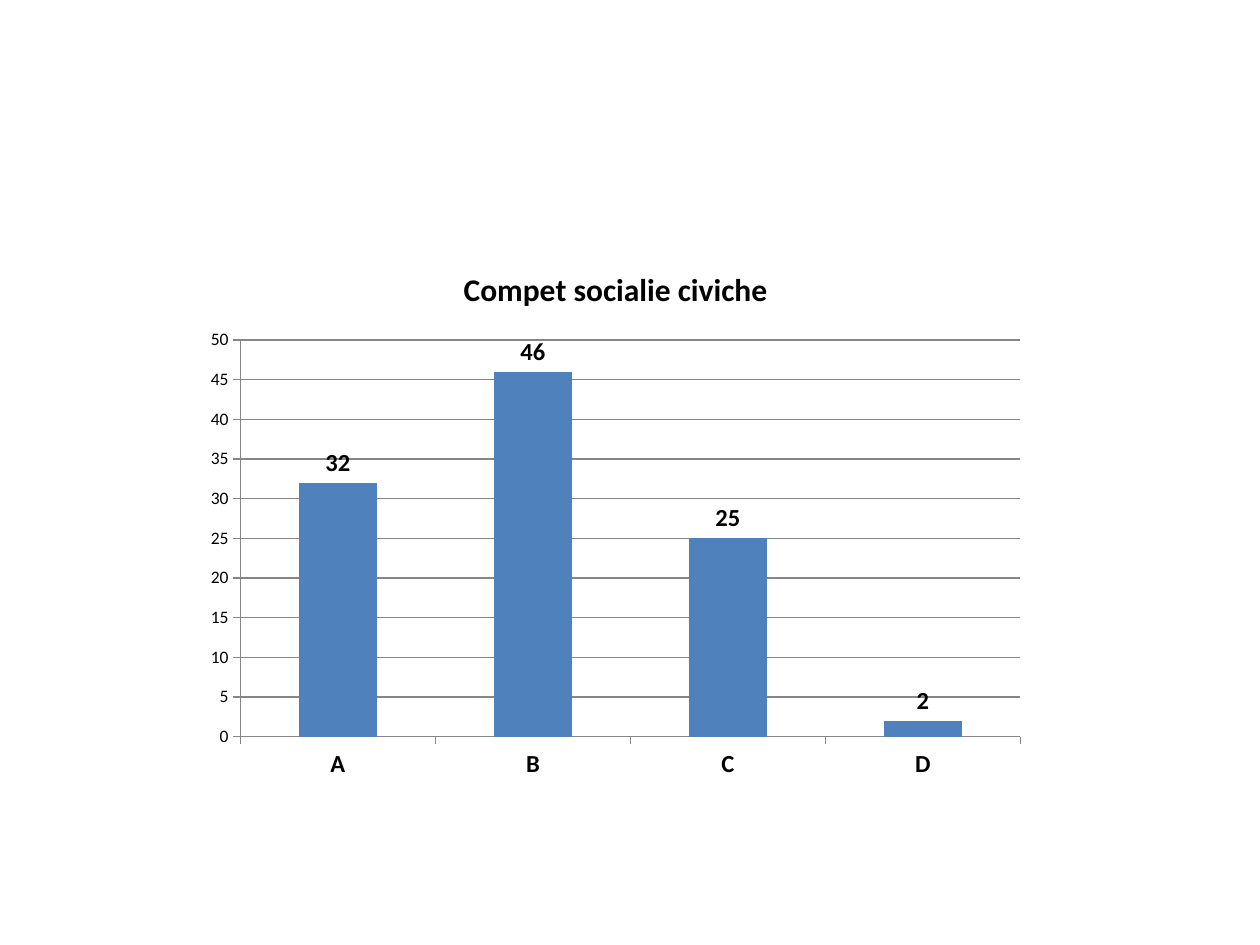
from pptx import Presentation
from pptx import util as u
from pptx.chart import data
from pptx.dml import color
from pptx.enum import chart as ch

COLOURS = {"bars": "4F81BD", "lines": "868686", "text": "000000"}


def style_font(font, size, bold=False):
    font.name = "Calibri"
    font.size = u.Pt(size)
    font.bold = bold
    font.color.rgb = color.RGBColor.from_string(COLOURS["text"])


def write_text(frame, wording, **style):
    frame.text = wording
    style_font(frame.paragraphs[0].runs[0].font, **style)


deck = Presentation()
deck.slide_width, deck.slide_height = u.Cm(25.4), u.Cm(19.05)
slide = deck.slides.add_slide(deck.slide_layouts[6])

heading = "Compet socialie civiche"
grades = data.CategoryChartData(number_format="General")
grades.categories = ["A", "B", "C", "D"]
grades.add_series(heading, (32, 46, 25, 2))

competences = slide.shapes.add_chart(
    ch.XL_CHART_TYPE.COLUMN_CLUSTERED,
    u.Cm(3.91), u.Cm(4.93), u.Cm(17), u.Cm(11), grades,
).chart
style_font(competences.font, size=10)
competences.has_legend = False
competences.has_title = True
write_text(competences.chart_title.text_frame, heading, size=18, bold=True)
competences.chart_title.include_in_layout = False

pupils_axis = competences.value_axis
pupils_axis.minimum_scale, pupils_axis.maximum_scale = 0, 50
pupils_axis.major_unit = 5
pupils_axis.has_major_gridlines = True
grade_axis = competences.category_axis
style_font(grade_axis.tick_labels.font, size=14, bold=True)
for axis in (pupils_axis, grade_axis):
    axis.major_tick_mark = ch.XL_TICK_MARK.OUTSIDE
for ruled in (pupils_axis, grade_axis, pupils_axis.major_gridlines):
    ruled.format.line.color.rgb = color.RGBColor.from_string(COLOURS["lines"])
    ruled.format.line.width = u.Pt(0.75)

columns = competences.plots[0]
columns.gap_width = 150
columns.vary_by_categories = False
bars = columns.series[0]
bars.format.fill.solid()
bars.format.fill.fore_color.rgb = color.RGBColor.from_string(COLOURS["bars"])
counts = bars.data_labels
counts.show_value = True
counts.position = ch.XL_LABEL_POSITION.OUTSIDE_END
style_font(counts.font, size=14, bold=True)

deck.save("out.pptx")
